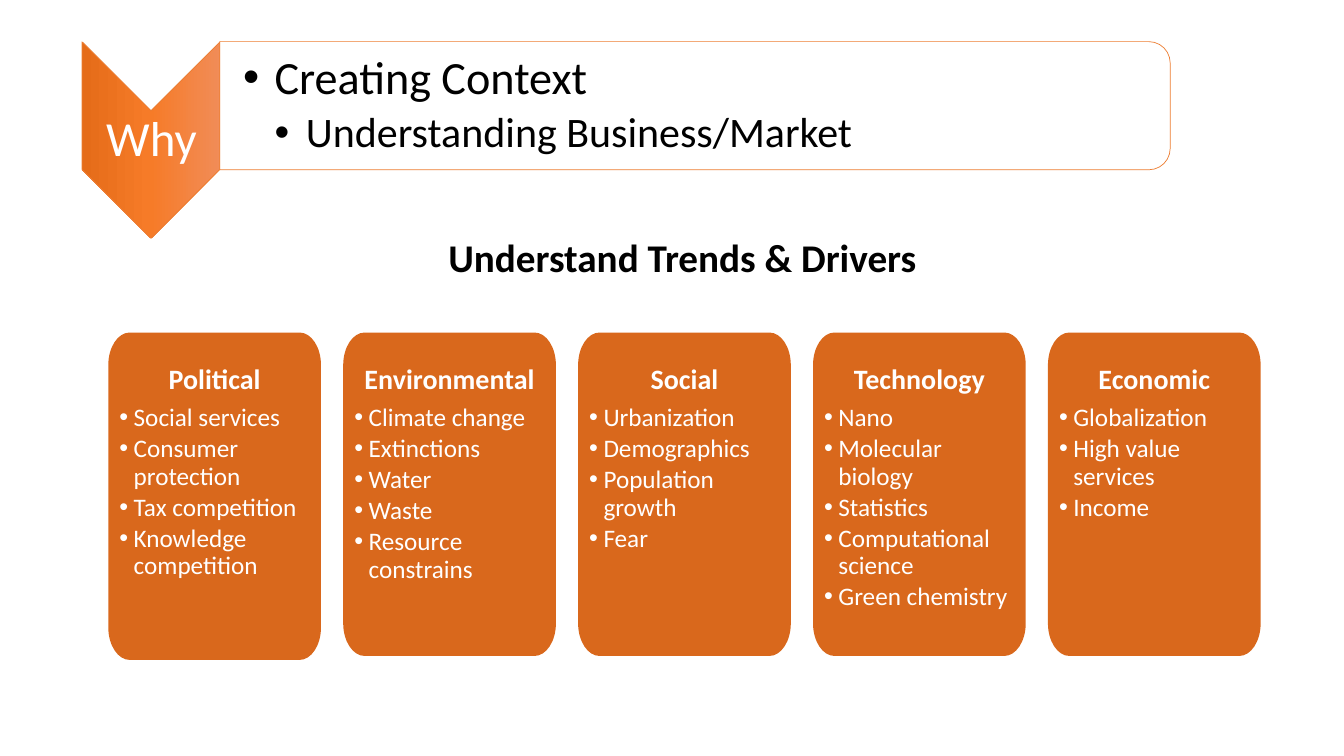
from lxml import etree
from pptx import Presentation
from pptx.dml.color import RGBColor
from pptx.enum.shapes import MSO_SHAPE
from pptx.enum.text import MSO_ANCHOR, MSO_AUTO_SIZE, PP_ALIGN
from pptx.oxml import parse_xml
from pptx.oxml.ns import nsdecls, qn
from pptx.util import Cm, Pt

CENTER, LEFT = PP_ALIGN.CENTER, PP_ALIGN.LEFT
TOP, MIDDLE = MSO_ANCHOR.TOP, MSO_ANCHOR.MIDDLE
FONT, BULLET_FONT = "Calibri", "Arial"
COLORS = {
    "card": "D9681C", "line": "ED7D31", "white": "FFFFFF", "black": "000000",
    "light": "F18C57", "mid": "F67B28", "dark": "E56C19",
}

# Content
STAGE = "Why"
CONTEXT = ["Creating Context", "Understanding Business/Market"]
TITLE = "Understand Trends & Drivers"
DRIVERS = [
    ("Political", ["Social services", "Consumer protection", "Tax competition",
                   "Knowledge competition"]),
    ("Environmental", ["Climate change", "Extinctions", "Water", "Waste",
                       "Resource constrains"]),
    ("Social", ["Urbanization", "Demographics", "Population growth", "Fear"]),
    ("Technology", ["Nano", "Molecular biology", "Statistics",
                    "Computational science", "Green chemistry"]),
    ("Economic", ["Globalization", "High value services", "Income"]),
]

# Card layout in centimetres
CARD_LEFT, CARD_TOP, CARD_WIDTH, CARD_STEP = 2.73, 8.38, 5.36, 5.92
FIRST_HEIGHT, CARD_HEIGHT = 8.25, 8.15
RADIUS_X, RADIUS_Y = 0.54, 0.82
ROUNDNESS = 0.55


def color(name):
    return RGBColor.from_string(COLORS[name])


def set_frame(shape, anchor, left, top, right, bottom):
    frame = shape.text_frame
    frame.word_wrap = True
    frame.vertical_anchor = anchor
    frame.margin_left, frame.margin_top = Cm(left), Cm(top)
    frame.margin_right, frame.margin_bottom = Cm(right), Cm(bottom)
    return frame


def write(frame, text, size, ink, bold=False, align=LEFT, after=0, spacing=0.9,
          indent=0, hang=0):
    """Fill the first paragraph if it is free, otherwise add one."""
    para = frame.paragraphs[0] if not frame.text else frame.add_paragraph()
    para.text = text
    para.alignment = align
    para.line_spacing = spacing
    para.space_after = Pt(size * after)
    font = para.runs[0].font
    font.name, font.size, font.bold = FONT, Pt(size), bold
    font.color.rgb = color(ink)
    if hang:
        props = para._p.get_or_add_pPr()
        props.set("marL", str(Cm(indent)))
        props.set("indent", str(-Cm(hang)))
        etree.SubElement(props, qn("a:buFont")).set("typeface", BULLET_FONT)
        etree.SubElement(props, qn("a:buChar")).set("char", "•")


def build_card(page, left, top, width, height):
    """Draw an octagon, then bend its four cut corners into curves."""
    near_x, far_x = RADIUS_X, width - RADIUS_X
    near_y, far_y = RADIUS_Y, height - RADIUS_Y
    outline = [(0, near_y), (near_x, 0), (far_x, 0), (width, near_y),
               (width, far_y), (far_x, height), (near_x, height), (0, far_y)]
    points = [(Cm(x), Cm(y)) for x, y in outline]
    builder = page.shapes.build_freeform(*points[0], scale=1.0)
    builder.add_line_segments(points[1:], close=True)
    card = builder.convert_to_shape(Cm(left), Cm(top))
    segments = list(card._element.iter(qn("a:lnTo")))
    corners = [(0, 0), (width, 0), (width, height), (0, height)]
    for index, corner in enumerate(corners):
        start, end = outline[2 * index], outline[2 * index + 1]
        controls = [tuple(p + (c - p) * ROUNDNESS for p, c in zip(point, corner))
                    for point in (start, end)]
        curve = etree.Element(qn("a:cubicBezTo"))
        for x, y in (*controls, end):
            etree.SubElement(curve, qn("a:pt"), x=str(Cm(x)), y=str(Cm(y)))
        line = segments[2 * index]
        line.getparent().replace(line, curve)
    return card


def add_card(page, index, heading, items):
    height = FIRST_HEIGHT if index == 0 else CARD_HEIGHT
    card = build_card(page, CARD_LEFT + index * CARD_STEP, CARD_TOP, CARD_WIDTH, height)
    card.shadow.inherit = False
    card.fill.solid()
    card.fill.fore_color.rgb = color("card")
    card.line.fill.background()
    frame = set_frame(card, TOP, 0.28, 0.82, 0.28, 0.28)
    write(frame, heading, 20, "white", bold=True, align=CENTER, after=0.35)
    for item in items:
        write(frame, item, 18, "white", after=0.15, indent=0.36, hang=0.36)


def add_turned(page, kind, left, top, width, height):
    shape = page.shapes.add_shape(kind, Cm(left), Cm(top), Cm(width), Cm(height))
    shape.rotation = 90
    shape.shadow.inherit = False
    shape.line.color.rgb = color("line")
    shape.line.width = Pt(0.5)
    shape.fill.solid()
    shape.fill.fore_color.rgb = color("white")
    return shape


def add_label(page, left, top, width, height):
    return page.shapes.add_textbox(Cm(left), Cm(top), Cm(width), Cm(height))


def main():
    deck = Presentation()
    deck.slide_width, deck.slide_height = Cm(33.87), Cm(19.05)
    page = deck.slides.add_slide(deck.slide_layouts[6])

    # Driver cards
    for index, (heading, items) in enumerate(DRIVERS):
        add_card(page, index, heading, items)

    # Title
    frame = add_label(page, 11.05, 5.75, 12.45, 1.45).text_frame
    frame.word_wrap = False
    frame.auto_size = MSO_AUTO_SIZE.SHAPE_TO_FIT_TEXT
    write(frame, TITLE, 28, "black", bold=True, spacing=1.0)

    # Stage chevron
    chevron = add_turned(page, MSO_SHAPE.CHEVRON, 1.33, 1.79, 4.95, 3.48)
    stops = "".join(
        f'<a:gs pos="{pos}"><a:srgbClr val="{COLORS[name]}"/></a:gs>'
        for pos, name in [(0, "light"), (50000, "mid"), (100000, "dark")])
    gradient = parse_xml(
        f'<a:gradFill {nsdecls("a")} rotWithShape="1"><a:gsLst>{stops}</a:gsLst>'
        '<a:lin ang="5400000" scaled="0"/></a:gradFill>')
    solid = chevron._element.spPr.find(qn("a:solidFill"))
    solid.getparent().replace(solid, gradient)
    frame = set_frame(add_label(page, 2.08, 2.79, 3.48, 1.5), MIDDLE, *[0.06] * 4)
    write(frame, STAGE, 35, "white", align=CENTER, after=0.35)

    # Context panel
    panel = add_turned(page, MSO_SHAPE.ROUND_2_SAME_RECTANGLE, 15.9, -9.31, 3.23, 23.95)
    fill = panel._element.spPr.find(qn("a:solidFill"))
    etree.SubElement(fill[0], qn("a:alpha")).set("val", "90000")
    frame = set_frame(add_label(page, 5.55, 1.21, 23.8, 2.92), MIDDLE, 0.58, 0.06, 0.06, 0.06)
    for level, (text, size) in enumerate(zip(CONTEXT, (33, 30)), start=1):
        write(frame, text, size, "black", after=0.15, indent=0.79 * level, hang=0.79)

    deck.save("out.pptx")


if __name__ == "__main__":
    main()
